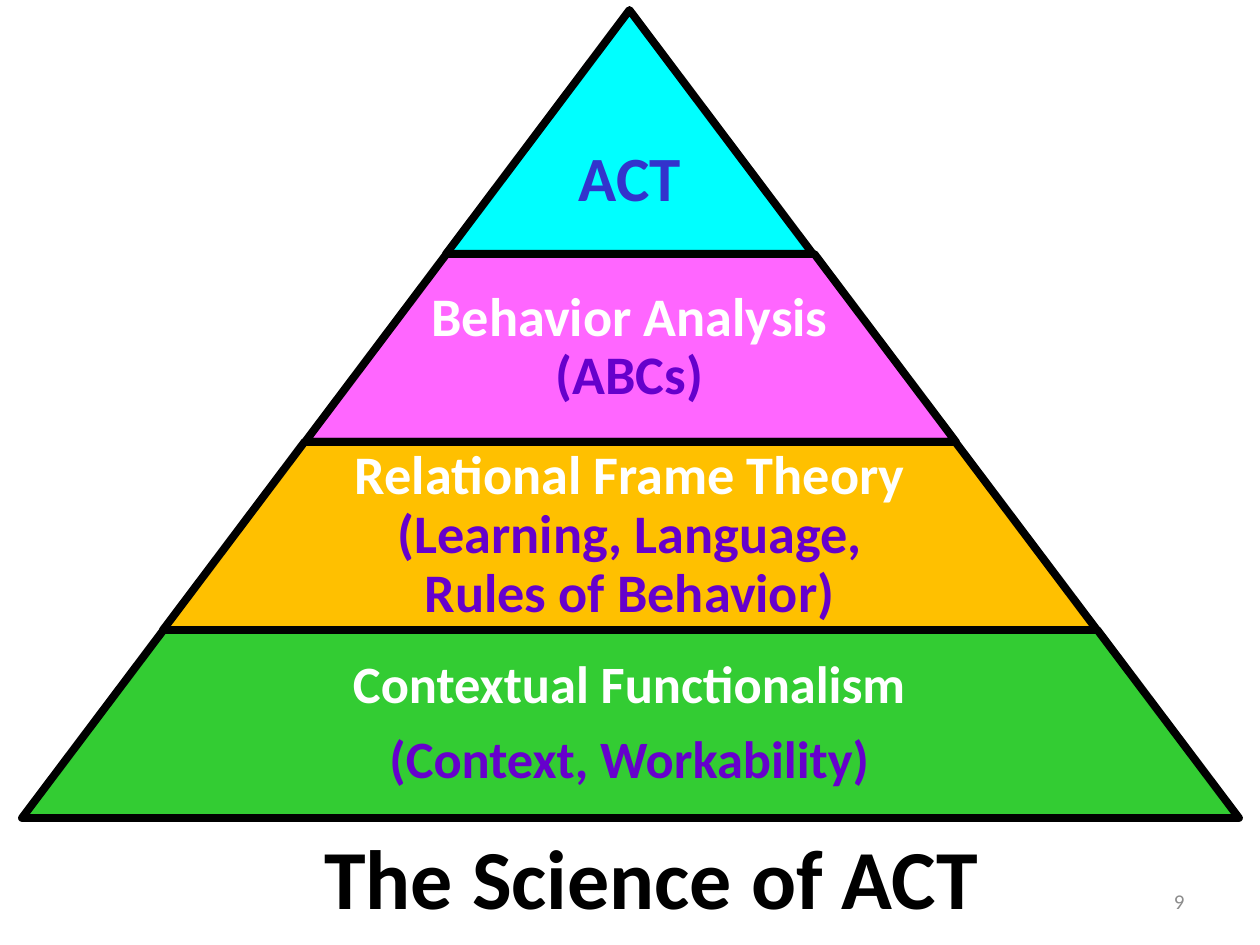
from lxml.etree import SubElement
from pptx import Presentation
from pptx.dml.color import RGBColor
from pptx.enum.shapes import MSO_SHAPE
from pptx.enum.text import MSO_ANCHOR, PP_ALIGN
from pptx.oxml.ns import qn
from pptx.util import Emu, Pt

PIXEL = 914400 // 126
CENTER, APEX, SLOPE = 630, 10, 0.753

BLACK = RGBColor(0x00, 0x00, 0x00)
WHITE = RGBColor(0xFF, 0xFF, 0xFF)
GRAY = RGBColor(0x8C, 0x8C, 0x8C)
BLUE = RGBColor(0x33, 0x33, 0xCC)
PURPLE = RGBColor(0x66, 0x00, 0xCC)
CYAN = RGBColor(0x00, 0xFF, 0xFF)
PINK = RGBColor(0xFF, 0x66, 0xFF)
GOLD = RGBColor(0xFF, 0xC0, 0x00)
GREEN = RGBColor(0x33, 0xCC, 0x33)

TIERS = [
    (244, CYAN, 368, 36, 98, [[("ACT", BLUE)]]),
    (188, PINK, 423, 31, 0, [[("Behavior Analysis ", WHITE), ("(ABCs)", PURPLE)]]),
    (188, GOLD, 607, 31, 0, [[("Relational Frame Theory ", WHITE),
                              ("(Learning, Language, Rules of Behavior)", PURPLE)]]),
    (188, GREEN, 791, 30, 0, [[("Contextual Functionalism", WHITE)],
                              [("(Context, Workability)", PURPLE)]]),
]
TIER_FRAME = {"margin_left": Emu(5 * PIXEL), "margin_right": Emu(5 * PIXEL),
              "margin_bottom": Emu(5 * PIXEL), "vertical_anchor": MSO_ANCHOR.MIDDLE}
TIER_PARAGRAPH = {"alignment": PP_ALIGN.CENTER, "line_spacing": 0.9, "space_after": Pt(10)}


def set_attributes(target, values):
    """Set each named attribute of the target."""
    for name, value in values.items():
        setattr(target, name, value)


def to_emu(*lengths):
    """Turn pixel lengths into EMU."""
    return [Emu(round(length) * PIXEL) for length in lengths]


def add_text(shapes, box, paragraphs, font, paragraph_format, frame_format):
    """Add a text box whose paragraphs are lists of (text, colour) runs."""
    frame = shapes.add_textbox(*to_emu(*box)).text_frame
    set_attributes(frame, {"word_wrap": True, **frame_format})
    for index, runs in enumerate(paragraphs):
        paragraph = frame.add_paragraph() if index else frame.paragraphs[0]
        set_attributes(paragraph, paragraph_format)
        for text, color in runs:
            run = paragraph.add_run()
            run.text = text
            set_attributes(run.font, {"name": "Calibri", **font})
            run.font.color.rgb = color


def add_band(shapes, top, height, color):
    """Add one trapezoid layer of the pyramid."""
    half_width = SLOPE * (top + height - APEX)
    box = to_emu(CENTER - half_width, top, 2 * half_width, height)
    shape = shapes.add_shape(MSO_SHAPE.TRAPEZOID, *box)
    shape.adjustments[0] = SLOPE
    shape.shadow.inherit = False
    shape.fill.solid()
    shape.fill.fore_color.rgb = color
    shape.line.color.rgb = BLACK
    shape.line.width = Pt(4.5)
    SubElement(shape.line._get_or_add_ln(), qn("a:round"))


def add_pyramid(slide):
    """Stack the labelled layers from the apex down."""
    shapes = slide.shapes.add_group_shape().shapes
    top = APEX
    for height, color, width, size, drop, paragraphs in TIERS:
        add_band(shapes, top, height, color)
        frame_format = {**TIER_FRAME, "margin_top": Emu((5 + drop) * PIXEL)}
        add_text(shapes, (CENTER - width / 2, top, width, height), paragraphs,
                 {"size": Pt(size), "bold": True}, TIER_PARAGRAPH, frame_format)
        top += height


def main():
    """Build and save the presentation."""
    presentation = Presentation()
    presentation.slide_width, presentation.slide_height = to_emu(1260, 945)
    slide = presentation.slides.add_slide(presentation.slide_layouts[6])
    add_pyramid(slide)
    add_text(slide.shapes, (179, 819, 945, 115), [[("The Science of ACT", BLACK)]],
             {"size": Pt(48), "bold": True}, {"alignment": PP_ALIGN.CENTER}, {})
    add_text(slide.shapes, (903, 876, 294, 50), [[("9", GRAY)]], {"size": Pt(12)},
             {"alignment": PP_ALIGN.RIGHT}, {"vertical_anchor": MSO_ANCHOR.MIDDLE})
    presentation.save("out.pptx")


if __name__ == "__main__":
    main()
